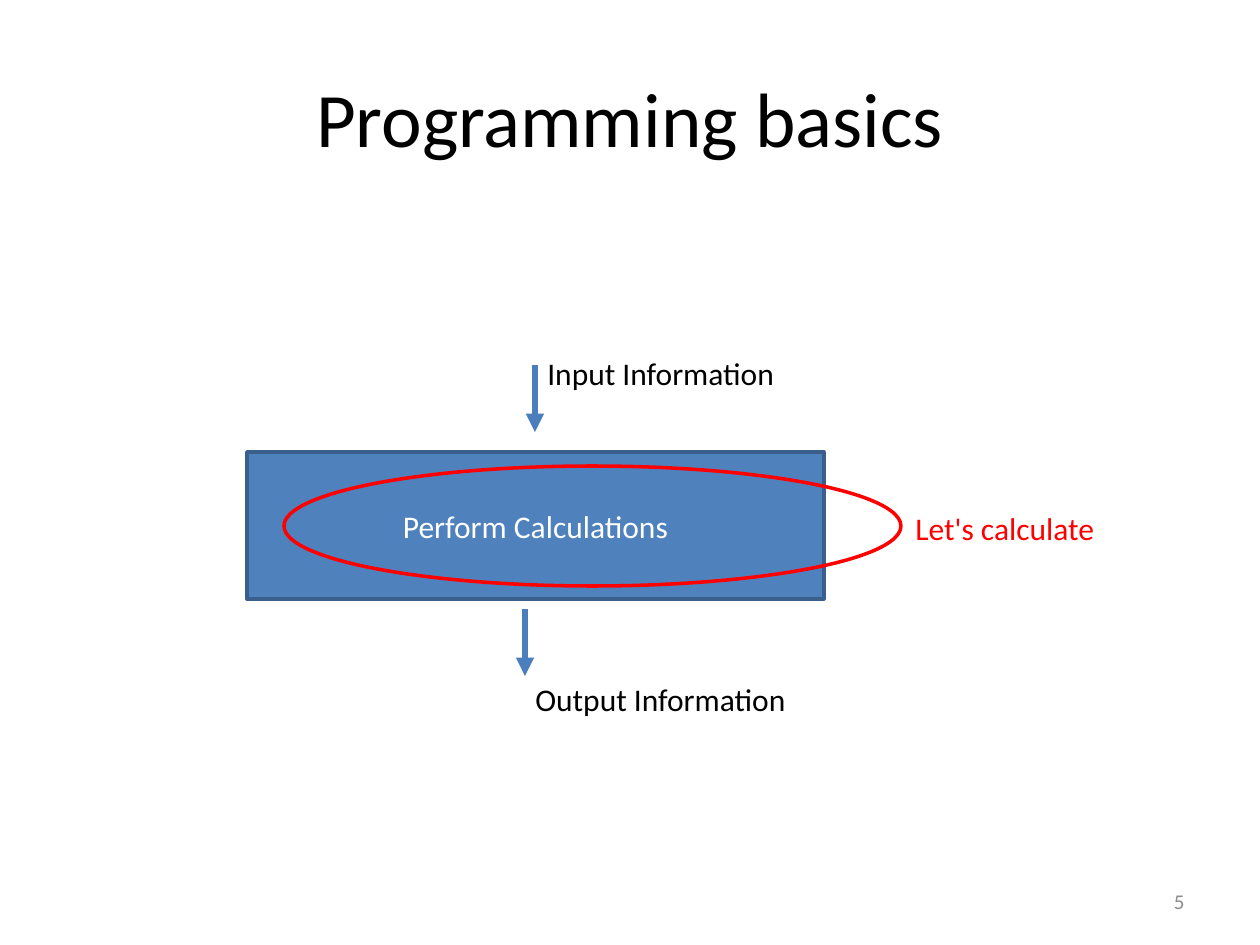
from lxml.etree import SubElement
from pptx import Presentation
from pptx.dml.color import RGBColor
from pptx.enum.shapes import MSO_CONNECTOR as Connector, MSO_SHAPE as Shape
from pptx.enum.text import MSO_ANCHOR as Anchor, PP_ALIGN as Align
from pptx.oxml.ns import qn
from pptx.util import Pt

COLORS = {
    "text": "000000",
    "number": "8C8C8C",
    "box": "4F81BD",
    "border": "3A5F8C",
    "arrow": "4B7EBC",
    "highlight": "FF0000",
    "light": "FFFFFF",
}


class Slide:
    scale = 914400 / 126
    font = "Calibri"

    def __init__(self, deck):
        deck.slide_width, deck.slide_height = self.emu(1260, 945)
        self.page = deck.slides.add_slide(deck.slide_layouts[6])

    def emu(self, *lengths):
        return [round(length * self.scale) for length in lengths]

    def color(self, name):
        return RGBColor.from_string(COLORS[name])

    def outline(self, item, color, width):
        item.line.color.rgb = self.color(color)
        item.line.width = Pt(width)

    def label(self, frame, words, color="text", size=18, align=Align.LEFT, anchor=Anchor.TOP):
        frame.word_wrap = True
        frame.vertical_anchor = anchor
        para = frame.paragraphs[0]
        para.alignment = align
        span = para.add_run()
        span.text = words
        for name, value in {"name": self.font, "size": Pt(size)}.items():
            setattr(span.font, name, value)
        span.font.color.rgb = self.color(color)

    def text(self, bounds, words, **style):
        box = self.page.shapes.add_textbox(*self.emu(*bounds))
        self.label(box.text_frame, words, **style)

    def shape(self, kind, bounds, line, fill=None):
        shape = self.page.shapes.add_shape(kind, *self.emu(*bounds))
        shape.shadow.inherit = False
        if fill:
            shape.fill.solid()
            shape.fill.fore_color.rgb = self.color(fill)
        else:
            shape.fill.background()
        self.outline(shape, line, 2)
        return shape

    def arrow(self, x, top, height):
        ends = self.emu(x, top, x, top + height)
        arrow = self.page.shapes.add_connector(Connector.STRAIGHT, *ends)
        self.outline(arrow, "arrow", 3.5)
        properties = arrow._element.spPr
        SubElement(properties.find(qn("a:ln")), qn("a:tailEnd"), type="triangle")
        SubElement(properties, qn("a:effectLst"))


def main():
    deck = Presentation()
    slide = Slide(deck)
    slide.text((63, 38, 1134, 158), "Programming basics",
               size=44, align=Align.CENTER, anchor=Anchor.MIDDLE)
    slide.text((903, 876, 294, 50), "5", color="number",
               size=12, align=Align.RIGHT, anchor=Anchor.MIDDLE)

    slide.arrow(535, 365, 67)
    slide.text((535, 348, 451, 50), "Input Information")
    step = slide.shape(Shape.RECTANGLE, (247, 452, 577, 147), "border", "box")
    slide.label(step.text_frame, "Perform Calculations", color="light",
                align=Align.CENTER, anchor=Anchor.MIDDLE)
    slide.arrow(525, 609, 67)
    slide.text((523, 674, 451, 50), "Output Information")

    slide.shape(Shape.OVAL, (284, 466, 617, 120), "highlight")
    slide.text((903, 503, 244, 50), "Let's calculate", color="highlight")
    deck.save("out.pptx")


if __name__ == "__main__":
    main()
